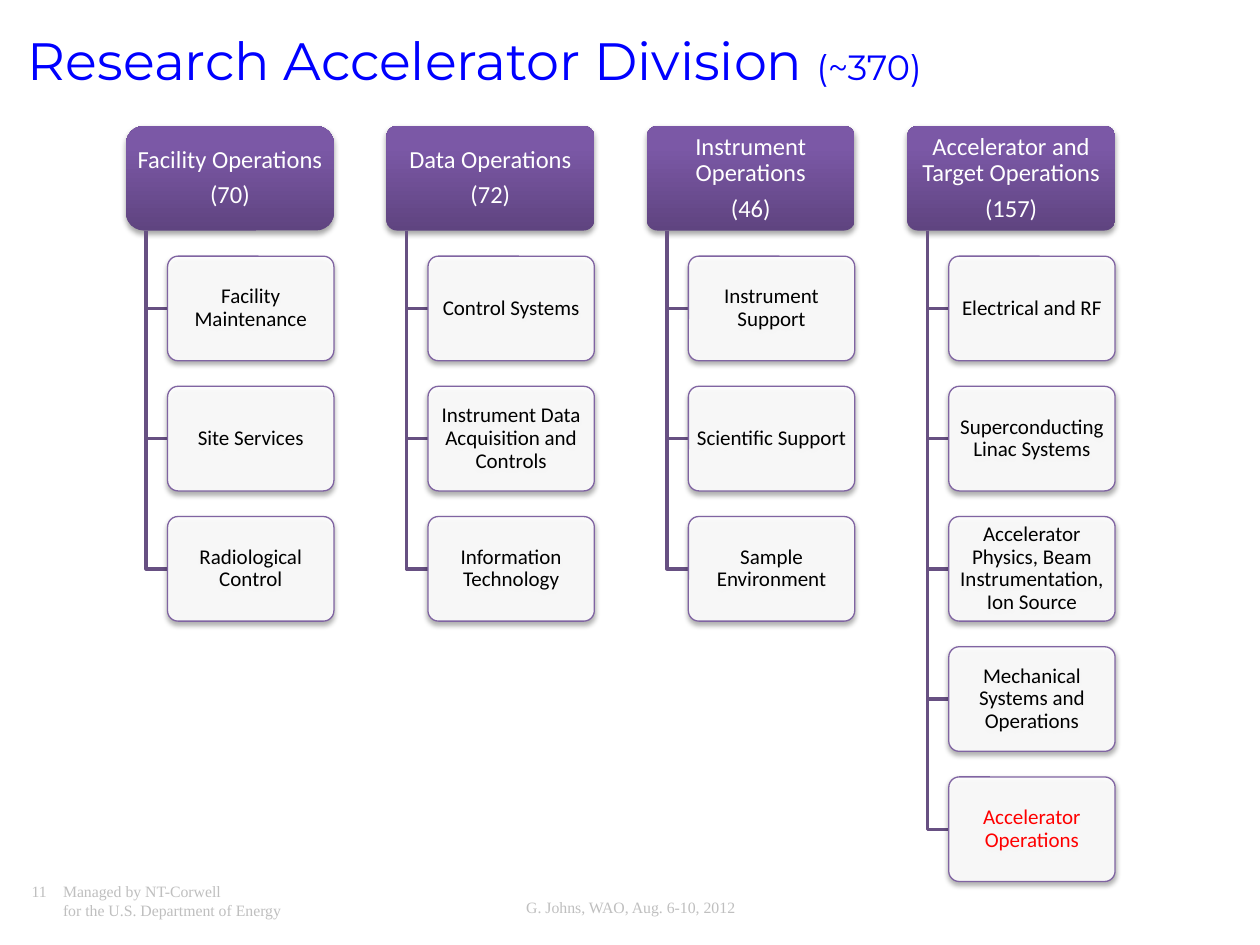
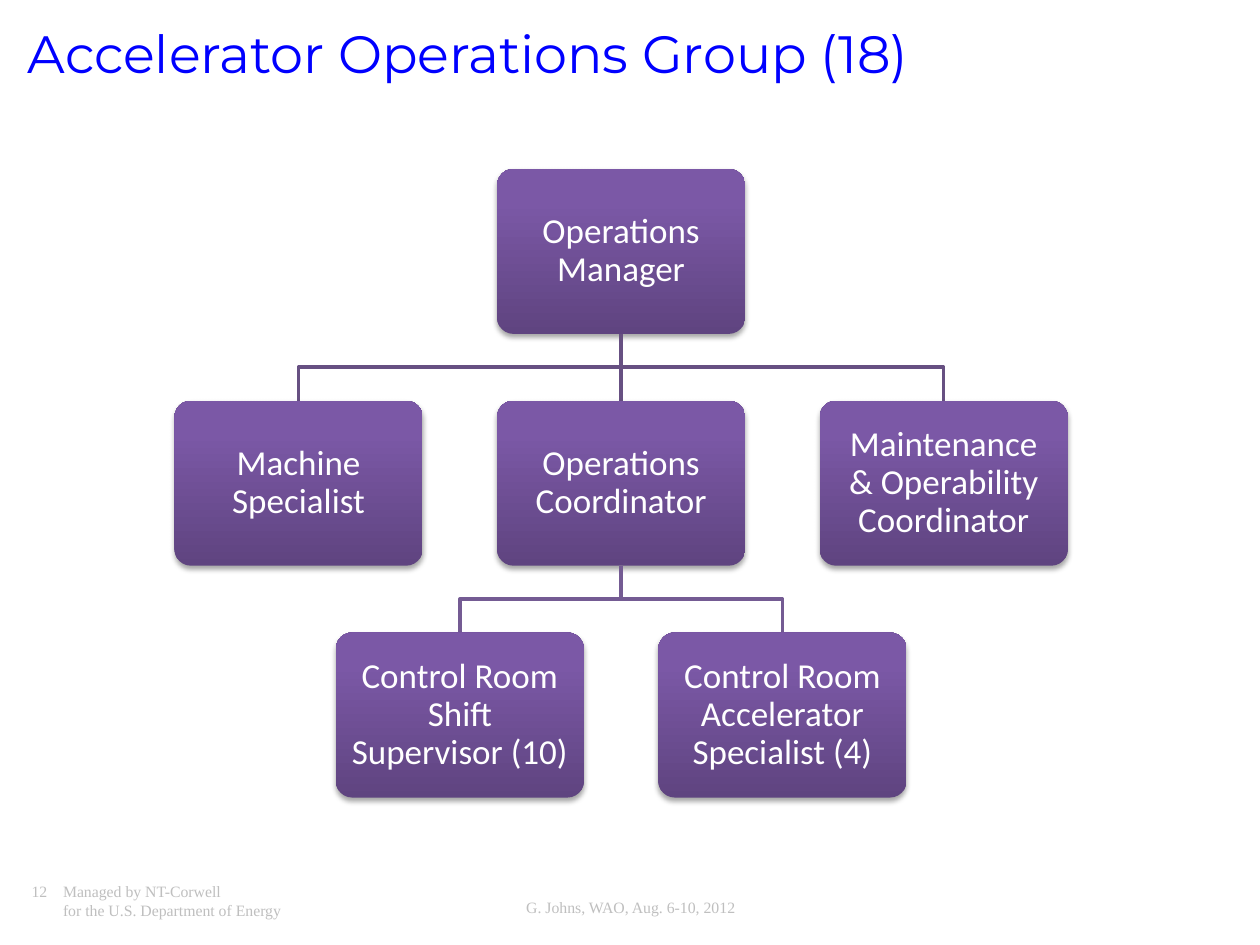
import pptx
import pptx.dml.color
import pptx.enum.shapes
import pptx.enum.text
import pptx.oxml
import pptx.oxml.ns
import pptx.util

Inches = pptx.util.Inches
RGBColor = pptx.dml.color.RGBColor
PP_ALIGN = pptx.enum.text.PP_ALIGN
MSO_ANCHOR = pptx.enum.text.MSO_ANCHOR
qn = pptx.oxml.ns.qn

TITLE_BLUE = RGBColor(0x00, 0x00, 0xFF)
FOOTER_GREY = RGBColor(0xBF, 0xBF, 0xBF)
DEEP_PURPLE = RGBColor(0x5F, 0x44, 0x80)
LIGHT_PURPLE = RGBColor(0x7B, 0x58, 0xA6)
BORDER_PURPLE = RGBColor(0x80, 0x64, 0xA2)
BRANCH_PURPLE = RGBColor(0x67, 0x50, 0x82)
LOWER_BRANCH_PURPLE = RGBColor(0x74, 0x5B, 0x93)
WHITE = RGBColor(0xFF, 0xFF, 0xFF)
BLACK = RGBColor(0x00, 0x00, 0x00)
RED = RGBColor(0xFF, 0x00, 0x00)

TITLE_FONT = "Montserrat"
CHART_FONT = "Calibri"
FOOTER_FONT = "Times New Roman"
BOX_ROUNDING = 0.1

DIVISION = [
    ("Facility Operations", "(70)",
     ["Facility Maintenance", "Site Services", "Radiological Control"]),
    ("Data Operations", "(72)",
     ["Control Systems", "Instrument Data Acquisition and Controls",
      "Information Technology"]),
    ("Instrument Operations", "(46)",
     ["Instrument Support", "Scientific Support", "Sample Environment"]),
    ("Accelerator and Target Operations", "(157)",
     ["Electrical and RF", "Superconducting Linac Systems",
      "Accelerator Physics, Beam Instrumentation, Ion Source",
      "Mechanical Systems and Operations", "Accelerator Operations"]),
]
HIGHLIGHTED_GROUP = "Accelerator Operations"

MANAGER = "Operations Manager"
COORDINATORS = [
    (-1, "Machine Specialist"),
    (0, "Operations Coordinator"),
    (1, "Maintenance & Operability Coordinator"),
]
CONTROL_ROOM = [
    (-0.5, "Control Room Shift Supervisor (10)"),
    (0.5, "Control Room Accelerator Specialist (4)"),
]


def style_run(run, font, size, color):
    """Set the font, size and colour of a run."""
    run.font.name = font
    run.font.size = pptx.util.Pt(size)
    run.font.color.rgb = color


def write_text(shape, lines, *, size, color, font=CHART_FONT, align=PP_ALIGN.CENTER,
               anchor=MSO_ANCHOR.MIDDLE, insets=(0.1, 0.05), spacing=0.9, after=0):
    """Fill a shape with one formatted paragraph per line."""
    frame = shape.text_frame
    frame.word_wrap = True
    frame.vertical_anchor = anchor
    frame.margin_left = frame.margin_right = Inches(insets[0])
    frame.margin_top = frame.margin_bottom = Inches(insets[1])
    for index, line in enumerate(lines):
        paragraph = frame.add_paragraph() if index else frame.paragraphs[0]
        paragraph.alignment = align
        paragraph.line_spacing = spacing
        paragraph.space_after = pptx.util.Pt(after)
        run = paragraph.add_run()
        run.text = line
        style_run(run, font, size, color)
    return frame


def add_title(slide, title, top, headcount=""):
    """Place the slide title, with an optional smaller headcount after it."""
    heading = slide.shapes.title
    heading.left, heading.top = Inches(0.12), Inches(top)
    heading.width, heading.height = Inches(9), Inches(0.54)
    frame = write_text(heading, [title], size=30, color=TITLE_BLUE, font=TITLE_FONT,
                       align=PP_ALIGN.LEFT, anchor=MSO_ANCHOR.TOP, spacing=0.85)
    frame.auto_size = pptx.enum.text.MSO_AUTO_SIZE.SHAPE_TO_FIT_TEXT
    if headcount:
        run = frame.paragraphs[0].add_run()
        run.text = headcount
        style_run(run, TITLE_FONT, 20, TITLE_BLUE)


def add_footer(slide, number):
    """Add the page number, managing body and event line."""
    style = dict(size=9, color=FOOTER_GREY, font=FOOTER_FONT,
                 anchor=MSO_ANCHOR.TOP, spacing=1.0)
    managed_by = slide.shapes.add_textbox(Inches(0.25), Inches(7), Inches(3.08), Inches(0.33))
    frame = write_text(managed_by, [f"{number}\tManaged by NT-Corwell",
                                    "\tfor the U.S. Department of Energy"],
                       align=PP_ALIGN.LEFT, insets=(0, 0), **style)
    for paragraph in frame.paragraphs:
        stops = pptx.oxml.parse_xml(
            f'<a:tabLst {pptx.oxml.ns.nsdecls("a")}>'
            f'<a:tab pos="{Inches(0.25)}" algn="l"/></a:tabLst>')
        paragraph._p.get_or_add_pPr().append(stops)
    event = slide.shapes.add_textbox(Inches(3.42), Inches(7.08), Inches(3.17), Inches(0.2))
    write_text(event, ["G. Johns, WAO, Aug. 6-10, 2012"], **style)


def add_soft_shadow(shape):
    """Give a shape a faint shadow straight below it."""
    shape.shadow.inherit = False
    shape._element.spPr.find(qn("a:effectLst")).append(pptx.oxml.parse_xml(
        f'<a:outerShdw {pptx.oxml.ns.nsdecls("a")} blurRad="{pptx.util.Pt(3.1)}" '
        f'dist="{pptx.util.Pt(1.8)}" dir="5400000" rotWithShape="0">'
        '<a:srgbClr val="000000"><a:alpha val="35000"/></a:srgbClr></a:outerShdw>'))


def add_box(slide, left, top, width, height, rounding=BOX_ROUNDING):
    """Add a rounded box with a soft shadow."""
    box = slide.shapes.add_shape(pptx.enum.shapes.MSO_SHAPE.ROUNDED_RECTANGLE,
                                 Inches(left), Inches(top), Inches(width), Inches(height))
    box.adjustments[0] = rounding
    add_soft_shadow(box)
    return box


def add_purple_box(slide, lines, left, top, width, height, *, size, insets,
                   rounding=BOX_ROUNDING):
    """Add a purple gradient box with white text."""
    box = add_box(slide, left, top, width, height, rounding)
    box.fill.gradient()
    box.fill.gradient_angle = 90
    for stop, color, position in zip(box.fill.gradient_stops,
                                     (DEEP_PURPLE, LIGHT_PURPLE), (0, 0.8)):
        stop.color.rgb = color
        stop.position = position
    box.line.fill.background()
    write_text(box, lines, size=size, color=WHITE, insets=insets, after=5)


def add_group_card(slide, group, left, top, width, height):
    """Add a translucent white card that names a group."""
    card = add_box(slide, left, top, width, height)
    card.fill.solid()
    card.fill.fore_color.rgb = WHITE
    white = card._element.spPr.find(qn("a:solidFill")).find(qn("a:srgbClr"))
    white.append(pptx.oxml.parse_xml(
        f'<a:alpha {pptx.oxml.ns.nsdecls("a")} val="90000"/>'))
    card.line.color.rgb = BORDER_PURPLE
    card.line.width = pptx.util.Pt(0.75)
    color = RED if group == HIGHLIGHTED_GROUP else BLACK
    write_text(card, [group], size=12, color=color, insets=(0.03, 0.02))


def add_branch(slide, points, color=BRANCH_PURPLE):
    """Draw an angled line through the points."""
    corners = [(Inches(x), Inches(y)) for x, y in points]
    builder = slide.shapes.build_freeform(*corners[0])
    builder.add_line_segments(corners[1:], close=False)
    branch = builder.convert_to_shape()
    branch.fill.background()
    branch.line.color.rgb = color
    branch.line.width = pptx.util.Pt(2)
    branch.shadow.inherit = False


def add_stem(slide, x, top, bottom):
    """Draw a straight vertical line between two levels."""
    stem = slide.shapes.add_connector(pptx.enum.shapes.MSO_CONNECTOR.STRAIGHT,
                                      Inches(x), Inches(top), Inches(x), Inches(bottom))
    stem.line.color.rgb = BRANCH_PURPLE
    stem.line.width = pptx.util.Pt(2)
    stem._element.spPr.append(pptx.oxml.parse_xml(
        f'<a:effectLst {pptx.oxml.ns.nsdecls("a")}/>'))


def add_division_column(slide, index, section, headcount, groups):
    """Draw one section header with its groups hanging below."""
    top, height, header_width, card_width = 1, 0.83, 1.65, 1.32
    column_pitch, row_pitch = 6.2 / 3, 3.1 / 3
    left = 1 + index * column_pitch
    card_left = left + header_width - card_width
    trunk = left + 0.16
    rounding = BOX_ROUNDING if index else 0.17
    add_purple_box(slide, [section, headcount], left, top, header_width, height,
                   size=14, insets=(0.03, 0.02), rounding=rounding)
    for row, group in enumerate(groups, start=1):
        card_top = top + row * row_pitch
        middle = card_top + height / 2
        add_branch(slide, [(trunk, top + height), (trunk, middle), (card_left, middle)])
        add_group_card(slide, group, card_left, card_top, card_width, height)


def add_staff_tree(slide):
    """Draw the manager, the coordinators and the control room staff."""
    center, first_top, width, height = 4.93, 1.34, 1.97, 1.31
    column_pitch, row_pitch = 2.56, 1.84
    levels = [([(0, MANAGER)], None),
              (COORDINATORS, BRANCH_PURPLE),
              (CONTROL_ROOM, LOWER_BRANCH_PURPLE)]
    for level, (roles, branch_color) in enumerate(levels):
        top = first_top + level * row_pitch
        parent_bottom = top - row_pitch + height
        bend = (parent_bottom + top) / 2
        for offset, role in roles:
            x = center + offset * column_pitch
            if level and offset:
                add_branch(slide, [(center, parent_bottom), (center, bend),
                                   (x, bend), (x, top)], branch_color)
            elif level:
                add_stem(slide, x, parent_bottom, top)
            add_purple_box(slide, [role], x - width / 2, top, width, height,
                           size=20, insets=(0.08, 0.08))


def main():
    """Build the two organisation slides."""
    deck = pptx.Presentation()
    deck.slide_width, deck.slide_height = Inches(10), Inches(7.5)
    title_only = deck.slide_layouts[5]

    division = deck.slides.add_slide(title_only)
    add_footer(division, 11)
    add_title(division, "Research Accelerator Division ", 0.25, "(~370)")
    for index, (section, headcount, groups) in enumerate(DIVISION):
        add_division_column(division, index, section, headcount, groups)

    operations = deck.slides.add_slide(title_only)
    add_footer(operations, 12)
    add_title(operations, "Accelerator Operations Group (18)", 0.19)
    add_staff_tree(operations)

    deck.save("out.pptx")


if __name__ == "__main__":
    main()
